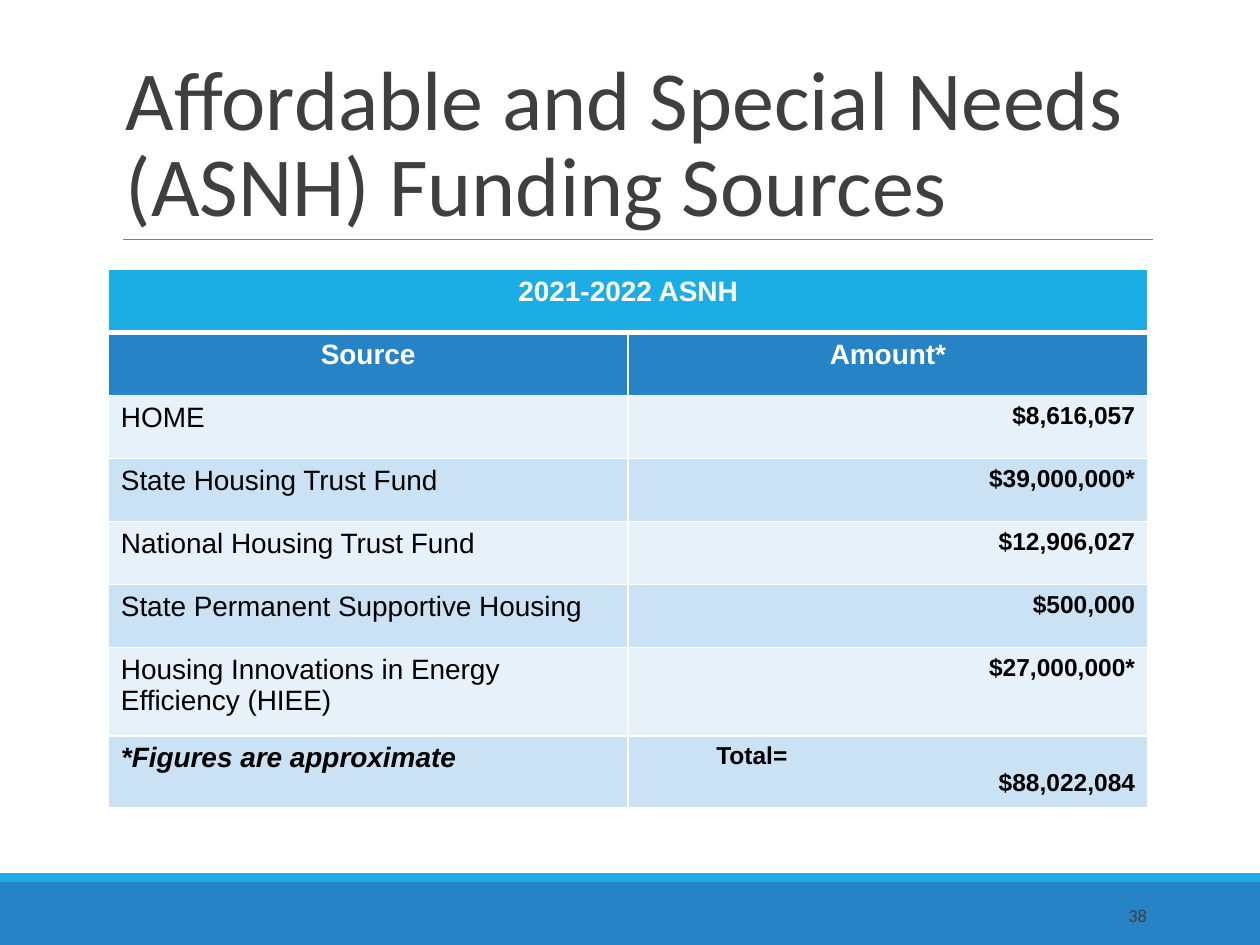
from typing import NamedTuple

from lxml.etree import SubElement
from pptx import Presentation
from pptx.dml.color import RGBColor
from pptx.enum.shapes import MSO_CONNECTOR, MSO_SHAPE
from pptx.enum.text import MSO_ANCHOR, PP_ALIGN
from pptx.oxml.ns import qn
from pptx.util import Inches, Pt

BLUE = RGBColor(0x26, 0x83, 0xC6)
CYAN = RGBColor(0x1C, 0xAD, 0xE4)
PALE = RGBColor(0xE7, 0xF1, 0xFA)
LIGHT = RGBColor(0xCB, 0xE2, 0xF5)
WHITE = RGBColor(0xFF, 0xFF, 0xFF)
BLACK = RGBColor(0, 0, 0)
TITLE_GREY = RGBColor(0x3F, 0x3F, 0x3F)
NUMBER_GREY = RGBColor(0x41, 0x41, 0x41)
RULE_GREY = RGBColor(0x7F, 0x7F, 0x7F)


class Box(NamedTuple):
    left: float
    top: float
    width: float
    height: float

    def emu(self) -> list:
        return [Inches(length) for length in self]


class Style(NamedTuple):
    size: float
    color: RGBColor = BLACK
    font: str = "Arial"
    align: PP_ALIGN = PP_ALIGN.LEFT
    bold: bool = False
    italic: bool = False


class Funding(NamedTuple):
    source: str
    amount: str


HEADING = Style(16, WHITE, align=PP_ALIGN.CENTER, bold=True)
SOURCE = Style(16)
FOOTNOTE = Style(16, bold=True, italic=True)
AMOUNT = Style(14, align=PP_ALIGN.RIGHT, bold=True)

FUNDING = [
    Funding("HOME", "$8,616,057"),
    Funding("State Housing Trust Fund", "$39,000,000*"),
    Funding("National Housing Trust Fund", "$12,906,027"),
    Funding("State Permanent Supportive Housing", "$500,000"),
    Funding("Housing Innovations in Energy Efficiency (HIEE)", "$27,000,000*"),
    Funding("*Figures are approximate", "Total=\n$88,022,084"),
]
ROW_HEIGHTS = [0.5] * 6 + [0.7, 0.53]


def write(frame, text: str, style: Style) -> None:
    frame.text = text
    for paragraph in frame.paragraphs:
        paragraph.alignment = style.align
        for run in paragraph.runs:
            font = run.font
            font.name, font.size = style.font, Pt(style.size)
            font.bold, font.italic = style.bold, style.italic
            font.color.rgb = style.color


def add_text(slide, box: Box, text: str, style: Style, anchor: MSO_ANCHOR):
    frame = slide.shapes.add_textbox(*box.emu()).text_frame
    frame.word_wrap = True
    frame.vertical_anchor = anchor
    write(frame, text, style)
    return frame


def add_band(slide, box: Box, color: RGBColor) -> None:
    band = slide.shapes.add_shape(MSO_SHAPE.RECTANGLE, *box.emu())
    band.shadow.inherit = False
    band.fill.solid()
    band.fill.fore_color.rgb = color
    band.line.fill.background()


def add_title_rule(slide) -> None:
    y = Inches(1.9)
    rule = slide.shapes.add_connector(MSO_CONNECTOR.STRAIGHT, Inches(0.98), y, Inches(9.15), y)
    rule.line.color.rgb = RULE_GREY
    rule.line.width = Pt(0.75)
    SubElement(rule._element.spPr, qn("a:effectLst"))


def set_borders(cell, top: float = 1, bottom: float = 1) -> None:
    """White borders; widths in points. Must come before the cell's fill."""
    properties = cell._tc.get_or_add_tcPr()
    for side, width in {"L": 1, "R": 1, "T": top, "B": bottom}.items():
        border = SubElement(properties, qn(f"a:ln{side}"), w=str(Pt(width)))
        fill = SubElement(border, qn("a:solidFill"))
        SubElement(fill, qn("a:srgbClr"), val=str(WHITE))


def fill_cell(cell, text: str, style: Style, color: RGBColor) -> None:
    write(cell.text_frame, text, style)
    cell.fill.solid()
    cell.fill.fore_color.rgb = color


def add_funding_table(slide, box: Box) -> None:
    table = slide.shapes.add_table(len(ROW_HEIGHTS), 2, *box.emu()).table
    table.first_row = table.horz_banding = False
    for column in table.columns:
        column.width = Inches(box.width / 2)
    for index, (row, height) in enumerate(zip(table.rows, ROW_HEIGHTS)):
        row.height = Inches(height)
        for cell in row.cells:
            set_borders(cell, top=3 if index == 1 else 1, bottom=3 if index == 0 else 1)

    table.cell(0, 0).merge(table.cell(0, 1))
    fill_cell(table.cell(0, 0), "2021-2022 ASNH", HEADING, CYAN)
    for column, label in enumerate(("Source", "Amount*")):
        fill_cell(table.cell(1, column), label, HEADING, BLUE)
    for index, funding in enumerate(FUNDING):
        color = LIGHT if index % 2 else PALE
        source_style = FOOTNOTE if funding is FUNDING[-1] else SOURCE
        fill_cell(table.cell(index + 2, 0), funding.source, source_style, color)
        fill_cell(table.cell(index + 2, 1), funding.amount, AMOUNT, color)

    total_label = table.cell(len(ROW_HEIGHTS) - 1, 1).text_frame.paragraphs[0]
    total_label.alignment = PP_ALIGN.LEFT
    total_label._p.get_or_add_pPr().set("marL", str(Inches(0.6)))


def main() -> None:
    presentation = Presentation()
    presentation.slide_width, presentation.slide_height = Inches(10), Inches(7.5)
    slide = presentation.slides.add_slide(presentation.slide_layouts[6])

    add_band(slide, Box(0, 7, 10, 0.5), BLUE)
    add_band(slide, Box(0, 6.93, 10, 0.07), CYAN)
    add_title_rule(slide)
    title = add_text(slide, Box(0.9, 0.31, 8.25, 1.59),
                     "Affordable and Special Needs (ASNH) Funding Sources",
                     Style(48, TITLE_GREY, "Calibri"), MSO_ANCHOR.BOTTOM)
    title.paragraphs[0].line_spacing = 0.85
    add_text(slide, Box(8.12, 7.06, 1.08, 0.4), "38",
             Style(10.5, NUMBER_GREY, "Calibri", PP_ALIGN.RIGHT), MSO_ANCHOR.MIDDLE)
    add_funding_table(slide, Box(0.86, 2.14, 8.25, sum(ROW_HEIGHTS)))
    presentation.save("out.pptx")


if __name__ == "__main__":
    main()
